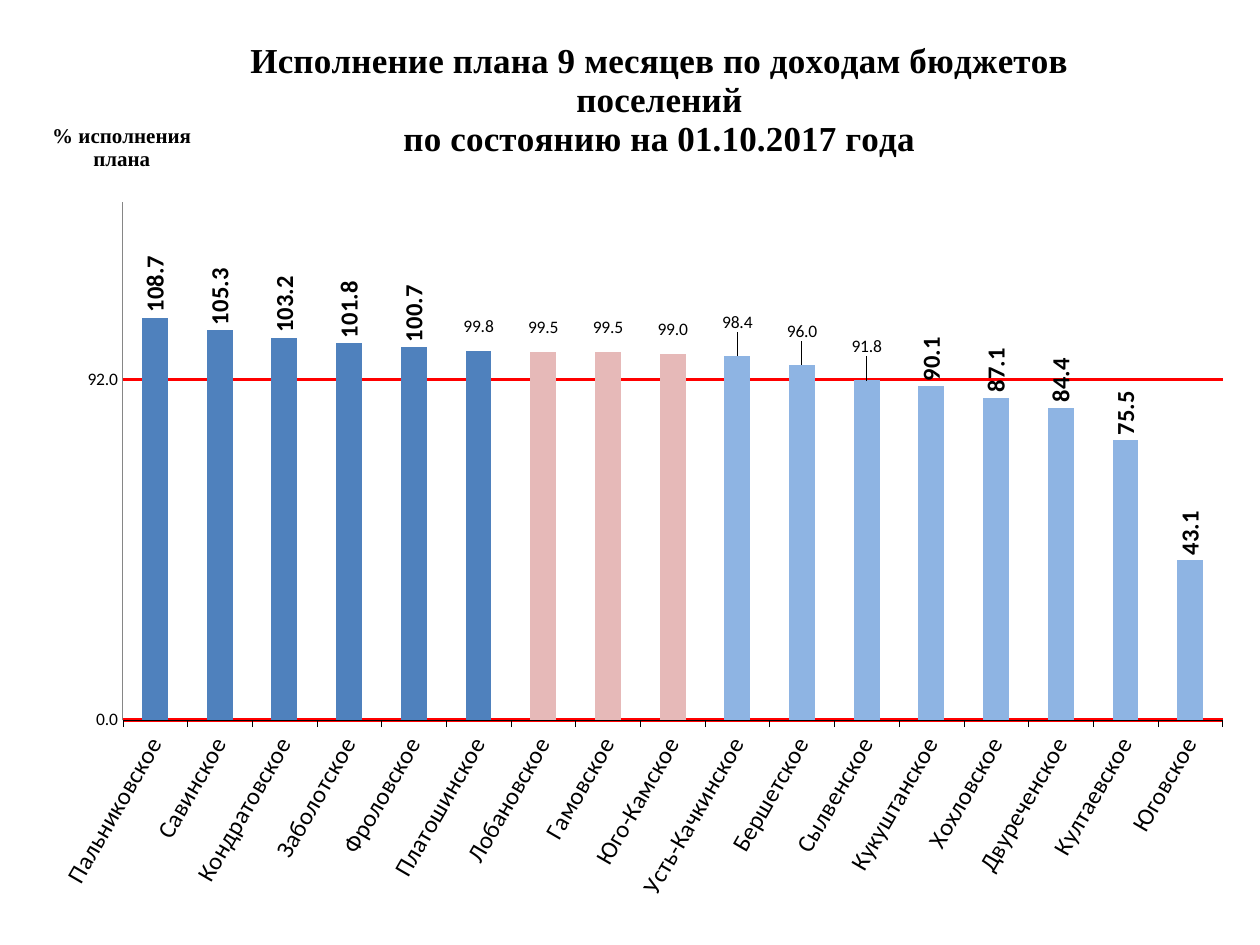
"""Build a slide with a column chart of budget income plan fulfilment by settlement."""
from copy import deepcopy
from dataclasses import dataclass

from lxml.etree import SubElement
from pptx import Presentation
from pptx.chart.data import CategoryChartData
from pptx.dml.color import RGBColor
from pptx.enum.chart import XL_CHART_TYPE, XL_LABEL_POSITION, XL_TICK_MARK
from pptx.oxml.ns import qn
from pptx.util import Pt


@dataclass(frozen=True)
class Theme:
    text: RGBColor = RGBColor(0, 0, 0)
    axis: RGBColor = RGBColor(0x86, 0x86, 0x86)
    plan: RGBColor = RGBColor(0xFF, 0, 0)
    base: RGBColor = RGBColor(0x37, 0x60, 0x92)
    high: RGBColor = RGBColor(0x4F, 0x81, 0xBD)
    middle: RGBColor = RGBColor(0xE6, 0xB9, 0xB8)
    low: RGBColor = RGBColor(0x8E, 0xB4, 0xE3)
    serif: str = "Times New Roman"
    sans: str = "Calibri"
    title_size: Pt = Pt(20)
    label_size: Pt = Pt(14)
    note_size: Pt = Pt(12)
    scale_size: Pt = Pt(10)


def write(frame, text, *, size, font=Theme.serif, color=Theme.text, bold=True):
    frame.text = text
    for paragraph in frame.paragraphs:
        for run in paragraph.runs:
            run.font.size, run.font.name, run.font.bold = size, font, bold
            run.font.color.rgb = color


def place(owner, index, **settings):
    for previous in owner.findall(qn("c:layout")):
        owner.remove(previous)
    layout = owner.makeelement(qn("c:layout"))
    manual = SubElement(layout, qn("c:manualLayout"))
    for key, value in settings.items():
        SubElement(manual, qn(f"c:{key}")).set("val", str(value))
    owner.insert(index, layout)


theme = Theme()
fulfilment = {
    "Пальниковское": 108.7, "Савинское": 105.3, "Кондратовское": 103.2,
    "Заболотское": 101.8, "Фроловское": 100.7, "Платошинское": 99.8,
    "Лобановское": 99.5, "Гамовское": 99.5, "Юго-Камское": 99.0,
    "Усть-Качкинское": 98.4, "Бершетское": 96.0, "Сылвенское": 91.8,
    "Кукуштанское": 90.1, "Хохловское": 87.1, "Двуреченское": 84.4,
    "Култаевское": 75.5, "Юговское": 43.1,
}
bar_colors = [theme.high] * 6 + [theme.middle] * 3 + [theme.low] * 8
label_lifts = {5: 0.01, 6: 0.01, 7: 0.01, 8: 0.01, 9: 0.02, 10: 0.02, 11: 0.02}

presentation = Presentation()
presentation.slide_width, presentation.slide_height = Pt(720), Pt(540)
slide = presentation.slides.add_slide(presentation.slide_layouts[6])

data = CategoryChartData(number_format="0.0")
data.categories = list(fulfilment)
data.add_series("% исполнения плана", list(fulfilment.values()))
chart = slide.shapes.add_chart(
    XL_CHART_TYPE.COLUMN_CLUSTERED, Pt(6.5), Pt(4.3), Pt(707), Pt(531.4), data
).chart
chart.has_legend = False
chart.font.name, chart.font.size = theme.sans, theme.scale_size
chart.font.color.rgb = theme.text

chart.has_title = True
write(
    chart.chart_title.text_frame,
    "Исполнение плана 9 месяцев по доходам бюджетов поселений\n"
    "по состоянию на 01.10.2017 года",
    size=theme.title_size,
)
place(chart.element.xpath("c:chart/c:title")[0], 1,
      xMode="edge", yMode="edge", x=0.19, y=0.03)
place(chart.element.xpath("c:chart/c:plotArea")[0], 0, layoutTarget="inner",
      xMode="edge", yMode="edge", x=0.09, y=0.209, w=0.889, h=0.557)

settlements = chart.category_axis
settlements.major_tick_mark = XL_TICK_MARK.OUTSIDE
settlements.tick_labels.font.size = theme.label_size
settlements.tick_labels.font.name = theme.sans
settlements.tick_labels.font.color.rgb = theme.text
settlements.format.line.color.rgb = theme.text
settlements.format.line.width = Pt(0.25)
chart.element.xpath(".//c:catAx/c:txPr/a:bodyPr")[0].set("rot", "-3600000")

percent = chart.value_axis
percent.minimum_scale, percent.maximum_scale, percent.major_unit = 0, 140, 92
percent.major_tick_mark = XL_TICK_MARK.NONE
percent.tick_labels.number_format = "0.0"
percent.tick_labels.number_format_is_linked = False
percent.tick_labels.font.size = theme.scale_size
percent.format.line.color.rgb = theme.axis
percent.format.line.width = Pt(0.75)
percent.major_gridlines.format.line.color.rgb = theme.plan
percent.major_gridlines.format.line.width = Pt(2)
write(percent.axis_title.text_frame, "% исполнения\nплана", size=theme.note_size)
percent_title = chart.element.xpath(".//c:valAx/c:title")[0]
place(percent_title, 1, xMode="edge", yMode="edge", x=0.03, y=0.12)
percent_title.xpath(".//a:bodyPr")[0].set("rot", "0")

plot = chart.plots[0]
plot.gap_width = 150
plot.vary_by_categories = False
bars = plot.series[0]
bars.format.fill.solid()
bars.format.fill.fore_color.rgb = theme.base
for index, color in enumerate(bar_colors):
    fill = bars.points[index].format.fill
    fill.solid()
    fill.fore_color.rgb = color

labels = bars.data_labels
labels.show_value = True
labels.position = XL_LABEL_POSITION.OUTSIDE_END
labels.number_format = "#,##0.0"
labels.number_format_is_linked = False
labels.font.size, labels.font.name, labels.font.bold = theme.label_size, theme.sans, True
labels.font.color.rgb = theme.text
label_group = chart.element.xpath(".//c:ser/c:dLbls")[0]
label_text = label_group.find(qn("c:txPr"))
label_text.find(qn("a:bodyPr")).set("rot", "-5400000")
label_text.find(qn("a:bodyPr")).set("vert", "horz")

for index, lift in label_lifts.items():
    bars.points[index].data_label.position = XL_LABEL_POSITION.OUTSIDE_END
    label = label_group.xpath(f"c:dLbl[c:idx/@val='{index}']")[0]
    place(label, 1, x=0, y=-lift)
    label.insert(2, deepcopy(label_group.find(qn("c:numFmt"))))
    label.insert(3, deepcopy(label_text))

presentation.save("out.pptx")
